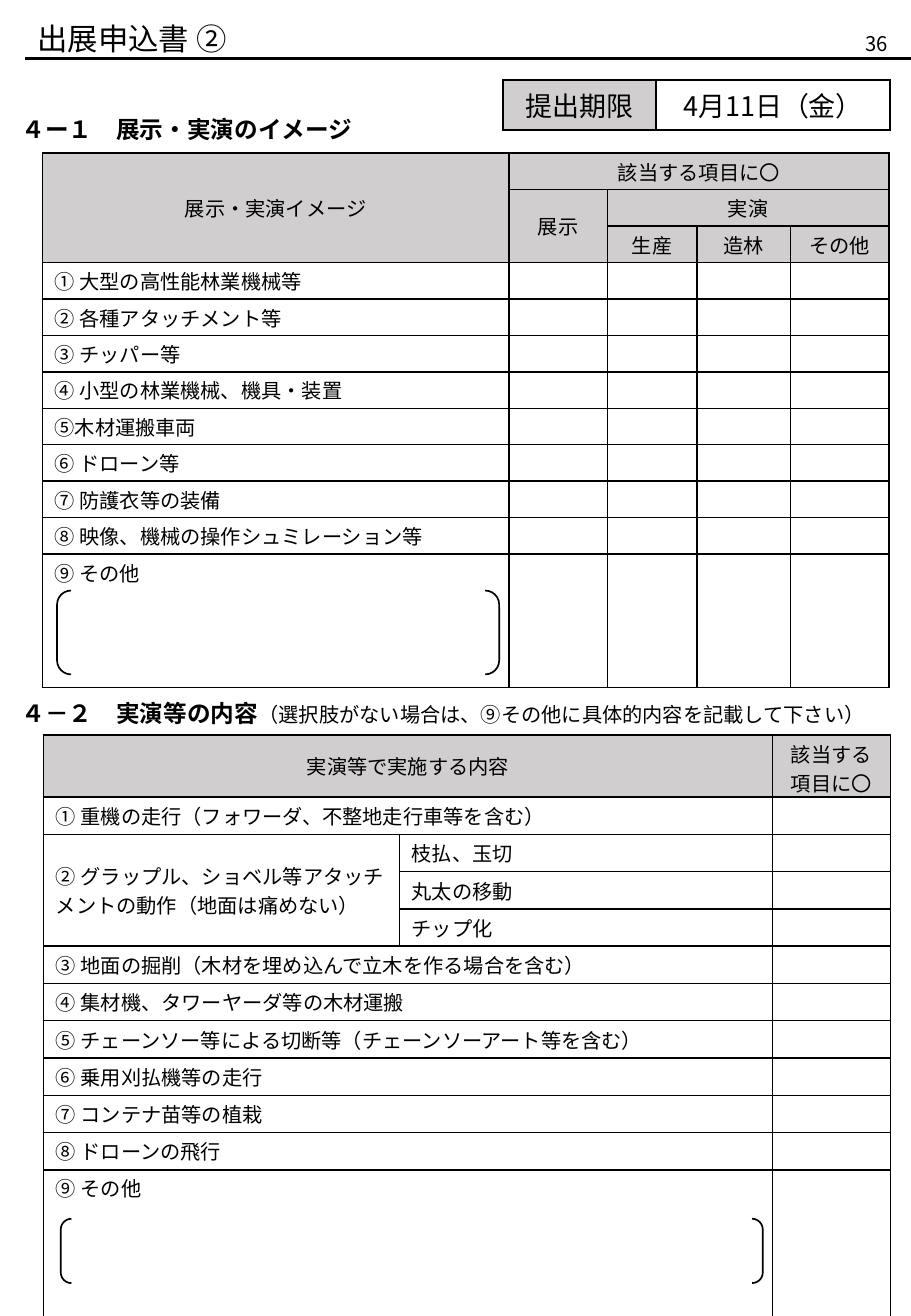
from lxml.etree import SubElement
from pptx import Presentation
from pptx.dml.color import RGBColor
from pptx.enum.shapes import MSO_CONNECTOR as Link, MSO_SHAPE as Shape
from pptx.enum.text import MSO_ANCHOR as Anchor, PP_ALIGN as Align
from pptx.oxml import parse_xml
from pptx.oxml.ns import nsdecls, qn
from pptx.util import Inches, Pt

FACE = "Noto Sans CJK JP"
BLACK, WHITE, GREY = "000000", "FFFFFF", "D0CECE"

IMAGE_ROWS = [
    ["展示・実演イメージ", "該当する項目に〇"],
    ["", "展示", "実演"],
    ["", "", "生産", "造林", "その他"],
    ["① 大型の高性能林業機械等"],
    ["➁ 各種アタッチメント等"],
    ["③ チッパー等"],
    ["④ 小型の林業機械、機具・装置"],
    ["⑤木材運搬車両"],
    ["⑥ ドローン等"],
    ["⑦ 防護衣等の装備"],
    ["⑧ 映像、機械の操作シュミレーション等"],
    ["⑨ その他"],
]
IMAGE_SPANS = [(0, 0, 2, 0), (0, 1, 0, 4), (1, 1, 2, 1), (1, 2, 1, 4)]

DEMO_ROWS = [
    ["実演等で実施する内容", "", "該当する項目に〇"],
    ["① 重機の走行（フォワーダ、不整地走行車等を含む）"],
    ["② グラップル、ショベル等アタッチメントの動作（地面は痛めない）", "枝払、玉切"],
    ["", "丸太の移動"],
    ["", "チップ化"],
    ["③ 地面の掘削（木材を埋め込んで立木を作る場合を含む）"],
    ["④ 集材機、タワーヤーダ等の木材運搬"],
    ["⑤ チェーンソー等による切断等（チェーンソーアート等を含む）"],
    ["⑥ 乗用刈払機等の走行"],
    ["⑦ コンテナ苗等の植栽"],
    ["⑧ ドローンの飛行"],
    ["⑨ その他"],
]
DEMO_SPANS = [(r, 0, r, 1) for r in range(12) if r not in (2, 3, 4)] + [(2, 0, 4, 0)]


def color(code):
    return RGBColor.from_string(code)


def assign(item, values):
    for name, value in values.items():
        setattr(item, name, value)


def add_run(para, text, size, bold=False):
    run = para.add_run()
    run.text = text
    assign(run.font, {"name": FACE, "size": Pt(size), "bold": bold})
    run.font.color.rgb = color(BLACK)
    SubElement(run.font._element, qn("a:ea")).set("typeface", FACE)


def add_text(slide, box, runs, align=Align.LEFT, anchor=Anchor.TOP):
    """Add a text box; each run is (text, size, bold)."""
    frame = slide.shapes.add_textbox(*map(Inches, box)).text_frame
    assign(frame, {"word_wrap": True, "vertical_anchor": anchor})
    para = frame.paragraphs[0]
    para.alignment = align
    for run in runs:
        add_run(para, *run)


def add_border(cell, width):
    props = cell._tc.get_or_add_tcPr()
    for spot, side in enumerate("LRTB"):
        props.insert(spot, parse_xml(
            f'<a:ln{side} {nsdecls("a")} w="{Pt(width)}"><a:solidFill>'
            f'<a:srgbClr val="{BLACK}"/></a:solidFill></a:ln{side}>'))


def fill_cell(cell, text, size, back, align, anchor, width):
    assign(cell, {
        "margin_top": Inches(0.03), "margin_bottom": Inches(0.03),
        "vertical_anchor": anchor,
    })
    cell.fill.solid()
    cell.fill.fore_color.rgb = color(back)
    add_border(cell, width)
    para = cell.text_frame.paragraphs[0]
    para.alignment = align
    if text:
        add_run(para, text, size)
    else:
        SubElement(para._p, qn("a:endParaRPr")).set("sz", str(size * 100))


def add_grid(slide, left, top, cols, heights, rows, head, spans=()):
    """Add a form table whose first head rows are grey, with a tall last row."""
    frame = slide.shapes.add_table(
        len(heights), len(cols), Inches(left), Inches(top),
        Inches(sum(cols)), Inches(sum(heights)))
    table = frame.table
    assign(table, {"first_row": False, "horz_banding": False})
    for col, width in zip(table.columns, cols):
        col.width = Inches(width)
    for r, (height, texts) in enumerate(zip(heights, rows)):
        table.rows[r].height = Inches(height)
        back, align = (GREY, Align.CENTER) if r < head else (WHITE, Align.LEFT)
        anchor = Anchor.TOP if r == len(rows) - 1 else Anchor.MIDDLE
        for c in range(len(cols)):
            text = texts[c] if c < len(texts) else ""
            fill_cell(table.cell(r, c), text, 12, back, align, anchor, 1)
    for r, c, end_r, end_c in spans:
        table.cell(r, c).merge(table.cell(end_r, end_c))


def add_limit(slide):
    """Add the deadline box."""
    table = slide.shapes.add_table(
        1, 2, Inches(4.14), Inches(0.66), Inches(3.19), Inches(0.41)).table
    assign(table, {"first_row": False, "horz_banding": False})
    parts = [("提出期限", 1.26, GREY), ("4月11日（金）", 1.93, WHITE)]
    for c, (text, width, back) in enumerate(parts):
        table.columns[c].width = Inches(width)
        fill_cell(table.cell(0, c), text, 16, back, Align.CENTER, Anchor.MIDDLE, 1.5)


def add_rule(slide):
    line = slide.shapes.add_connector(
        Link.STRAIGHT, Inches(0.21), Inches(0.48), Inches(7.5), Inches(0.48))
    line.line.color.rgb = color(BLACK)
    line.line.width = Pt(1.5)
    SubElement(line._element.spPr, qn("a:effectLst"))


def add_bracket(slide, box):
    pair = slide.shapes.add_shape(Shape.DOUBLE_BRACKET, *map(Inches, box))
    pair.shadow.inherit = False
    pair.fill.background()
    pair.line.color.rgb = color(BLACK)
    pair.line.width = Pt(1)


def main():
    deck = Presentation()
    assign(deck, {"slide_width": Inches(7.5), "slide_height": Inches(10.83)})
    slide = deck.slides.add_slide(deck.slide_layouts[6])

    add_rule(slide)
    add_text(slide, (0.21, 0.12, 2, 0.4), [("出展申込書 ➁", 18)])
    add_text(slide, (6.94, 0.21, 0.56, 0.3), [("36", 12)], Align.CENTER, Anchor.MIDDLE)

    add_text(slide, (0.08, 0.9, 2.95, 0.34), [("４ー１　展示・実演のイメージ", 14, True)])
    add_grid(slide, 0.35, 1.26, [3.84, 0.81, 0.74, 0.77, 0.81],
             [0.3] * 11 + [1.1], IMAGE_ROWS, 3, IMAGE_SPANS)

    add_text(slide, (0.08, 5.7, 7.42, 0.34), [
        ("４－２　実演等の内容", 14, True),
        ("（選択肢がない場合は、⑨その他に具体的内容を記載して下さい）", 12)])
    add_grid(slide, 0.36, 6.05, [2.93, 3.07, 0.97],
             [0.51] + [3.07 / 10] * 10 + [1.22], DEMO_ROWS, 1, DEMO_SPANS)

    add_limit(slide)
    add_bracket(slide, (0.5, 10.03, 5.78, 0.53))
    add_bracket(slide, (0.47, 4.86, 3.64, 0.69))
    deck.save("out.pptx")


if __name__ == "__main__":
    main()
